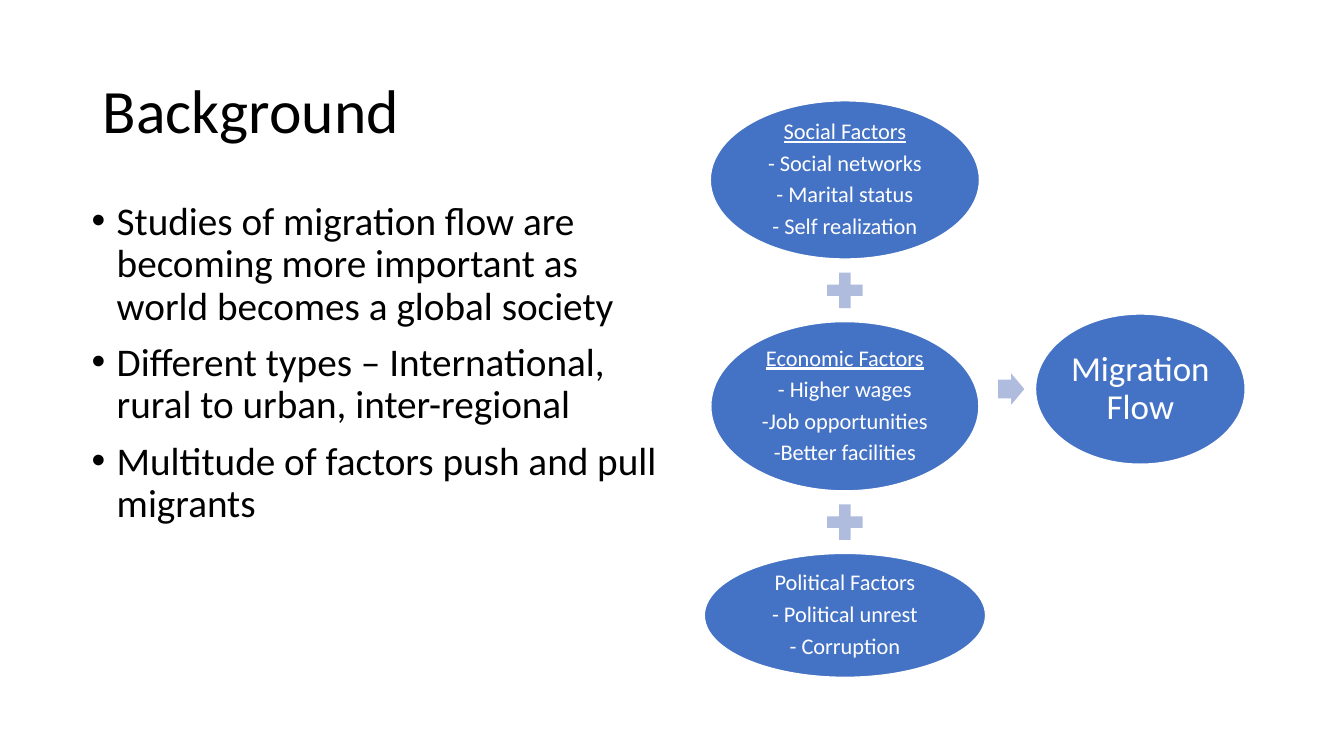
from lxml.etree import SubElement
from pptx import Presentation
from pptx.dml.color import RGBColor
from pptx.enum.shapes import MSO_SHAPE
from pptx.enum.text import MSO_ANCHOR, PP_ALIGN
from pptx.oxml.ns import qn
from pptx.util import Inches, Pt

BLACK = RGBColor(0x00, 0x00, 0x00)
WHITE = RGBColor(0xFF, 0xFF, 0xFF)
BLUE = RGBColor(0x44, 0x72, 0xC4)
PALE_BLUE = RGBColor(0xB0, 0xBC, 0xDE)
FONT = "Calibri"

POINTS = [
    "Studies of migration flow are becoming more important as world becomes a global society",
    "Different types – International, rural to urban, inter-regional",
    "Multitude of factors push and pull migrants",
]
# Width, height, underlined heading, lines
FACTORS = [
    (2.67, 1.57, True,
     ["Social Factors", "- Social networks", "- Marital status", "- Self realization"]),
    (2.66, 1.68, True,
     ["Economic Factors", "- Higher wages", "-Job opportunities", "-Better facilities"]),
    (2.79, 1.23, False,
     ["Political Factors", "- Political unrest", "- Corruption"]),
]
PLUS_SIZE = 0.48
GAP = 0.07


def format_paragraph(para, size, color, alignment):
    para.alignment = alignment
    para.line_spacing = 0.9
    para.font.name = FONT
    para.font.size = Pt(size)
    para.font.color.rgb = color


def add_title(page, left, top, width, height):
    title = page.shapes.title
    title.left, title.top = Inches(left), Inches(top)
    title.width, title.height = Inches(width), Inches(height)
    title.text_frame.text = "Background"
    title.text_frame.vertical_anchor = MSO_ANCHOR.MIDDLE
    format_paragraph(title.text_frame.paragraphs[0], 44, BLACK, PP_ALIGN.LEFT)


def add_points(page, left, top, width, height):
    box = page.shapes.add_textbox(Inches(left), Inches(top), Inches(width), Inches(height))
    frame = box.text_frame
    frame.word_wrap = True
    frame.text = "\n".join(POINTS)
    for para in frame.paragraphs:
        format_paragraph(para, 28, BLACK, PP_ALIGN.LEFT)
        para.space_before = Pt(10)
        # Hanging bullet
        properties = para._p.get_or_add_pPr()
        properties.set("marL", str(Inches(0.25)))
        properties.set("indent", str(Inches(-0.25)))
        SubElement(properties, qn("a:buFont"), typeface="Arial")
        SubElement(properties, qn("a:buChar"), char="•")


def add_centred(page, kind, center_x, center_y, width, height, color):
    shape = page.shapes.add_shape(
        kind, Inches(center_x - width / 2), Inches(center_y - height / 2),
        Inches(width), Inches(height))
    shape.shadow.inherit = False
    shape.fill.solid()
    shape.fill.fore_color.rgb = color
    shape.line.fill.background()
    return shape


def add_ellipse(page, center_x, center_y, width, height, lines, size, space_after=0):
    ellipse = add_centred(page, MSO_SHAPE.OVAL, center_x, center_y, width, height, BLUE)
    ellipse.line.color.rgb = WHITE
    ellipse.line.width = Pt(1)
    frame = ellipse.text_frame
    frame.word_wrap = True
    frame.vertical_anchor = MSO_ANCHOR.MIDDLE
    frame.margin_left = frame.margin_right = Inches(0.02)
    frame.margin_top = frame.margin_bottom = Inches(0.02)
    frame.text = "\n".join(lines)
    for para in frame.paragraphs:
        format_paragraph(para, size, WHITE, PP_ALIGN.CENTER)
        para.space_after = Pt(space_after)
    return ellipse


def add_flow(page, center_x, top):
    # Stacked factors joined by plus signs
    y = top
    for index, (width, height, underlined, lines) in enumerate(FACTORS):
        if index:
            add_centred(page, MSO_SHAPE.MATH_PLUS, center_x, y + GAP + PLUS_SIZE / 2,
                        PLUS_SIZE, PLUS_SIZE, PALE_BLUE)
            y += PLUS_SIZE + 2 * GAP
        ellipse = add_ellipse(page, center_x, y + height / 2, width, height, lines, 16, 5.3)
        if underlined:
            ellipse.text_frame.paragraphs[0].font.underline = True
        y += height

    # Arrow and result, level with the middle of the stack
    middle = (top + y) / 2
    arrow = add_centred(page, MSO_SHAPE.RIGHT_ARROW, center_x + 1.65, middle,
                        0.26, 0.31, PALE_BLUE)
    arrow.adjustments[0] = 0.6
    add_ellipse(page, center_x + 2.93, middle, 2.08, 1.49, ["Migration Flow"], 25)


def main():
    deck = Presentation()
    deck.slide_width, deck.slide_height = Inches(13.33), Inches(7.5)
    page = deck.slides.add_slide(deck.slide_layouts[5])
    add_title(page, 0.92, 0.4, 11.5, 1.45)
    add_points(page, 0.81, 1.95, 5.9, 4.76)
    add_flow(page, 8.38, 1)
    deck.save("out.pptx")


if __name__ == "__main__":
    main()
